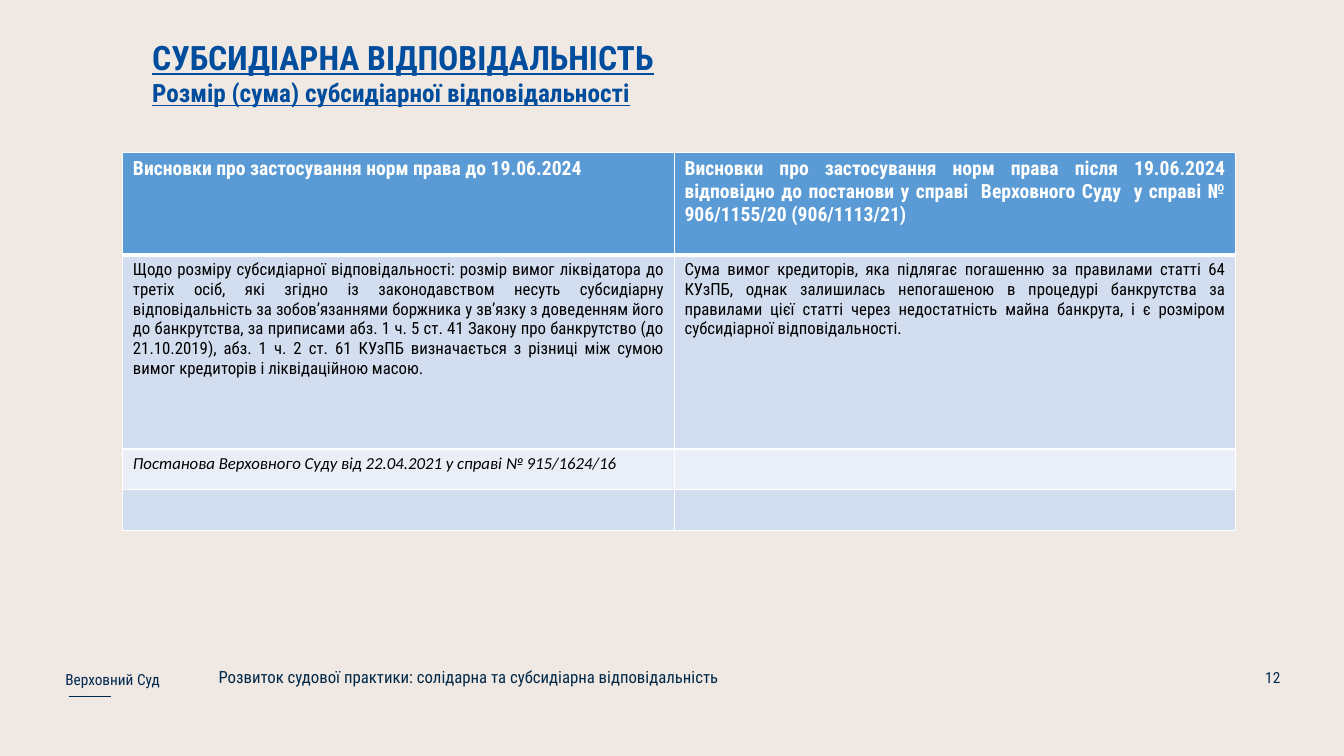
from dataclasses import dataclass

from lxml.etree import SubElement
from pptx import Presentation
from pptx.dml.color import RGBColor
from pptx.enum.text import MSO_ANCHOR, MSO_AUTO_SIZE, PP_ALIGN
from pptx.oxml.ns import qn
from pptx.util import Pt


@dataclass(frozen=True)
class Theme:
    font: str = "Roboto Condensed"
    source_font: str = "Calibri"
    background: str = "F0E8E3"
    title: str = "004D9D"
    footer: str = "00274E"
    topic: str = "002949"
    text: str = "000000"
    white: str = "FFFFFF"
    header_fill: str = "5B9BD5"
    band_fills: tuple = ("D2DEEF", "EAEFF7")
    title_size: float = 24
    subtitle_size: float = 18
    header_size: float = 14
    body_size: float = 12
    footer_size: float = 10.9


class PageBuilder:
    def __init__(self, deck, theme):
        self.theme = theme
        self.page = deck.slides.add_slide(deck.slide_layouts[5])
        self.page.background.fill.solid()
        self.page.background.fill.fore_color.rgb = RGBColor.from_string(theme.background)

    def style(self, para, size, color, align=PP_ALIGN.LEFT, bold=False, italic=False,
              underline=False, font=None):
        para.alignment = align
        para.font.name = font or self.theme.font
        para.font.size = Pt(size)
        para.font.bold = bold
        para.font.italic = italic
        para.font.underline = underline
        para.font.color.rgb = RGBColor.from_string(color)

    def place(self, box, left, top, width, height):
        box.left, box.top, box.width, box.height = map(Pt, (left, top, width, height))

    def title(self, lines, *bounds):
        box = self.page.shapes.title
        self.place(box, *bounds)
        frame = box.text_frame
        frame.text = "\n".join(lines)
        frame.word_wrap = True
        frame.auto_size = MSO_AUTO_SIZE.NONE
        frame.vertical_anchor = MSO_ANCHOR.TOP
        sizes = (self.theme.title_size, self.theme.subtitle_size)
        for para, size in zip(frame.paragraphs, sizes):
            self.style(para, size, self.theme.title, bold=True, underline=True)

    def text(self, words, bounds, size, color, align=PP_ALIGN.LEFT,
             anchor=MSO_ANCHOR.MIDDLE, spacing=1.0):
        box = self.page.shapes.add_textbox(*map(Pt, bounds))
        frame = box.text_frame
        frame.word_wrap = True
        frame.vertical_anchor = anchor
        frame.text = words
        para = frame.paragraphs[0]
        para.line_spacing = spacing
        self.style(para, size, color, align)

    def line(self, start, end, weight, color):
        connector = self.page.shapes.add_connector(1, *map(Pt, start + end))
        connector.line.color.rgb = RGBColor.from_string(color)
        connector.line.width = Pt(weight)
        SubElement(connector._element.spPr, qn("a:effectLst"))

    def borders(self, cell, widths):
        properties = cell._tc.get_or_add_tcPr()
        for side, width in zip("LRTB", widths):
            edge = SubElement(properties, qn(f"a:ln{side}"), w=str(Pt(width)))
            fill = SubElement(edge, qn("a:solidFill"))
            SubElement(fill, qn("a:srgbClr"), val=self.theme.white)

    def table(self, rows, left, top, widths, heights):
        theme = self.theme
        table = self.page.shapes.add_table(
            len(heights), len(widths), Pt(left), Pt(top),
            Pt(sum(widths)), Pt(sum(heights))).table
        for column, width in zip(table.columns, widths):
            column.width = Pt(width)
        for index, (row, height) in enumerate(zip(table.rows, heights)):
            row.height = Pt(height)
            top_edge = 3 if index == 1 else 1
            bottom_edge = 3 if index == 0 else 1
            color = theme.band_fills[(index - 1) % 2] if index else theme.header_fill
            for cell, (words, look) in zip(row.cells, rows[index]):
                self.borders(cell, (1, 1, top_edge, bottom_edge))
                cell.fill.solid()
                cell.fill.fore_color.rgb = RGBColor.from_string(color)
                cell.text = words
                self.style(cell.text_frame.paragraphs[0], **look)


def main():
    theme = Theme()
    deck = Presentation()
    deck.slide_width, deck.slide_height = Pt(960), Pt(540)
    builder = PageBuilder(deck, theme)

    builder.line((49, 497.5), (79.2, 497.5), 1.12, theme.footer)
    builder.text("Верховний Суд", (39.6, 470.2, 103.7, 28.8),
                 theme.footer_size, theme.footer, spacing=1.14)
    builder.title(("СУБСИДІАРНА ВІДПОВІДАЛЬНІСТЬ",
                   "Розмір (сума) субсидіарної відповідальності"),
                  101.5, 23, 838.8, 58.3)
    builder.text("Розвиток судової практики: солідарна та субсидіарна відповідальність",
                 (149, 474.5, 608.4, 25.9), theme.body_size, theme.topic,
                 PP_ALIGN.JUSTIFY, MSO_ANCHOR.TOP, 0.9)
    builder.text("12", (705.6, 469.4, 216, 28.8),
                 theme.footer_size, theme.footer, PP_ALIGN.RIGHT)

    header = dict(size=theme.header_size, color=theme.white, bold=True)
    body = dict(size=theme.body_size, color=theme.text, align=PP_ALIGN.JUSTIFY)
    source = dict(size=theme.body_size, color=theme.text, italic=True, font=theme.source_font)
    empty = ("", body)
    rows = (
        (("Висновки про застосування норм права до 19.06.2024", header),
         ("Висновки про застосування норм права після 19.06.2024 відповідно до постанови "
          "у справі  Верховного Суду  у справі № 906/1155/20 (906/1113/21)",
          header | dict(align=PP_ALIGN.JUSTIFY))),
        (("Щодо розміру субсидіарної відповідальності: розмір вимог ліквідатора до третіх "
          "осіб, які згідно із законодавством несуть субсидіарну відповідальність за "
          "зобов’язаннями боржника у зв’язку з доведенням його до банкрутства, за приписами "
          "абз. 1 ч. 5 ст. 41 Закону про банкрутство (до 21.10.2019), абз. 1 ч. 2 ст. 61 "
          "КУзПБ визначається з різниці між сумою вимог кредиторів і ліквідаційною масою.",
          body),
         ("Сума вимог кредиторів, яка підлягає погашенню за правилами статті 64 КУзПБ, "
          "однак залишилась непогашеною в процедурі банкрутства за правилами цієї статті "
          "через недостатність майна банкрута, і є розміром субсидіарної відповідальності.",
          body)),
        (("Постанова Верховного Суду від 22.04.2021 у справі № 915/1624/16", source), empty),
        (empty, empty),
    )
    builder.table(rows, 87.8, 108.7, (394, 401), (73.5, 138.5, 29, 29))
    deck.save("out.pptx")


if __name__ == "__main__":
    main()
